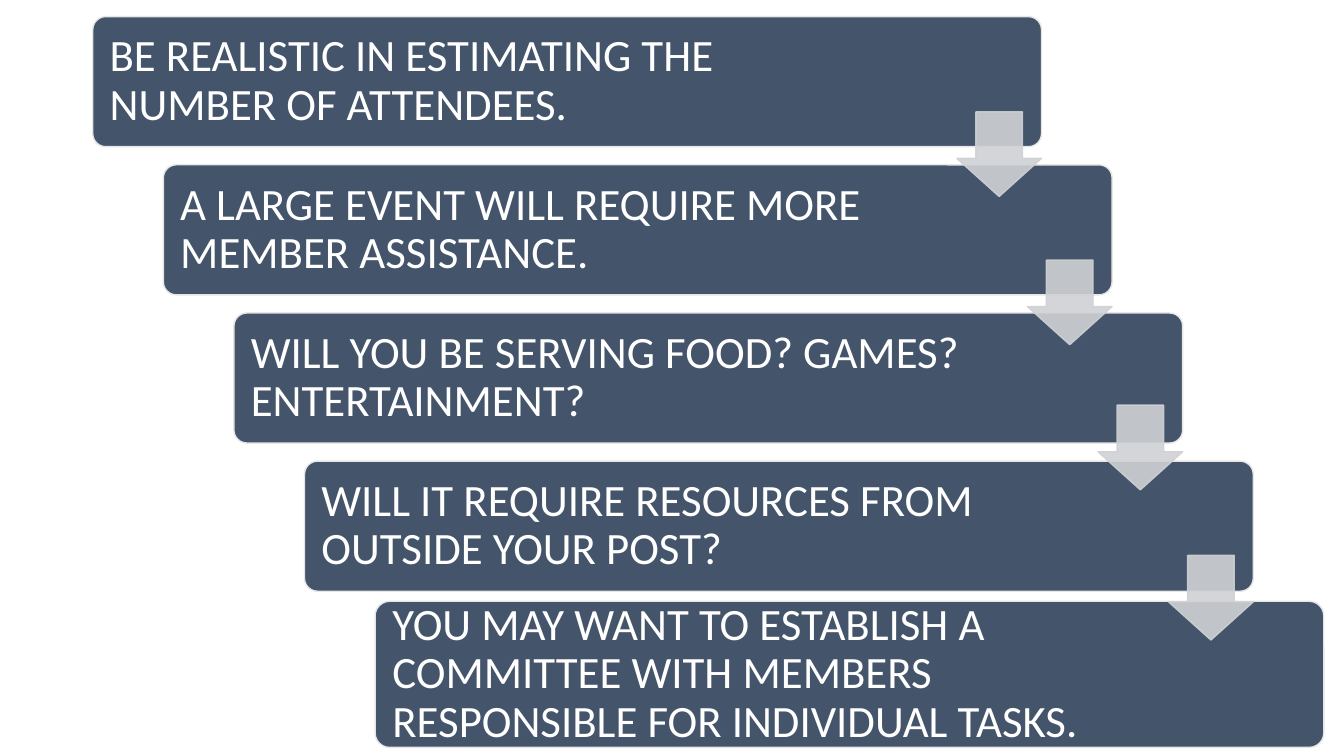
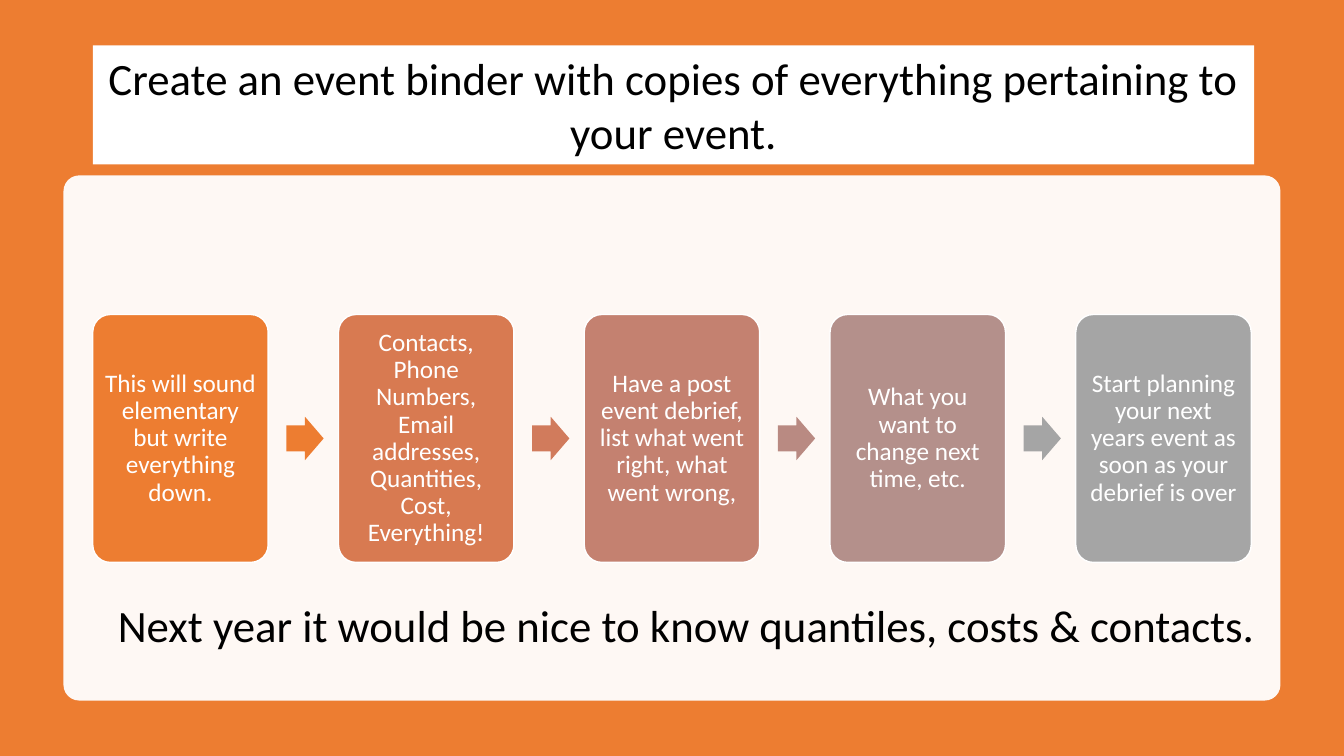
"""Builds two event-planning slides: a descending staircase and a left-to-right process."""
import lxml.etree
import pptx
import pptx.dml.color
import pptx.enum.shapes
import pptx.enum.text
import pptx.oxml.ns
import pptx.util

Inches = pptx.util.Inches
SHAPES = pptx.enum.shapes.MSO_SHAPE
ALIGN = pptx.enum.text.PP_ALIGN
MIDDLE = pptx.enum.text.MSO_ANCHOR.MIDDLE

FONT = "Calibri"
WHITE, BLACK, ORANGE = "FFFFFF", "000000", "ED7D31"
NAVY, PALE_GREY, ARROW_GREY = "44546A", "E7E6E6", "CFD1D4"

STAIRS = [
    ("BE REALISTIC IN ESTIMATING THE NUMBER OF ATTENDEES.", 1.29),
    ("A LARGE EVENT WILL REQUIRE MORE MEMBER ASSISTANCE.", 1.29),
    ("WILL YOU BE SERVING FOOD? GAMES? ENTERTAINMENT?", 1.29),
    ("WILL IT REQUIRE RESOURCES FROM OUTSIDE YOUR POST?", 1.29),
    ("YOU MAY WANT TO ESTABLISH A COMMITTEE WITH MEMBERS "
     "RESPONSIBLE FOR INDIVIDUAL TASKS.", 1.45),
]
STAIR_ARROW_TOPS = [1.11, 2.58, 4.02, 5.51]

BINDER_TITLE = "Create an event binder with copies of everything pertaining to your event."
BINDER_STEPS = [
    ("This will sound elementary but write everything down.", ORANGE),
    ("Contacts, Phone Numbers, Email addresses, Quantities, Cost, Everything!", "D87A51"),
    ("Have a post event debrief, list what went right, what went wrong,", "C48170"),
    ("What you want to change next time, etc.", "B4908B"),
    ("Start planning your next years event as soon as your debrief is over", "A5A5A5"),
]
BINDER_ARROW_COLOURS = [ORANGE, "D17B5C", "B98A82", "A5A5A5"]
BINDER_CLOSING = "Next year it would be nice to know quantiles, costs & contacts."


def paint(fill, colour, opacity=100):
    fill.solid()
    fill.fore_color.rgb = pptx.dml.color.RGBColor.from_string(colour)
    if opacity < 100:
        for tone in fill._xPr.iter(pptx.oxml.ns.qn("a:srgbClr")):
            alpha = lxml.etree.SubElement(tone, pptx.oxml.ns.qn("a:alpha"))
            alpha.set("val", str(opacity * 1000))


def add_block(slide, preset, place, colour, adjustments, outline=None, opacity=100):
    block = slide.shapes.add_shape(preset, *map(Inches, place))
    block.shadow.inherit = False
    for index, value in enumerate(adjustments):
        block.adjustments[index] = value
    paint(block.fill, colour, opacity)
    if outline:
        paint(block.line.fill, outline, opacity)
        block.line.width = pptx.util.Pt(1)
    else:
        block.line.fill.background()
    return block


def write(holder, text, size, colour, align, insets=(0.1, 0.05, 0.1, 0.05), spacing=1.0):
    frame = holder.text_frame
    frame.word_wrap = True
    frame.auto_size = pptx.enum.text.MSO_AUTO_SIZE.NONE
    frame.vertical_anchor = MIDDLE
    (frame.margin_left, frame.margin_top,
     frame.margin_right, frame.margin_bottom) = map(Inches, insets)
    paragraph = frame.paragraphs[0]
    paragraph.alignment = align
    paragraph.line_spacing = spacing
    run = paragraph.add_run()
    run.text = text
    run.font.name = FONT
    run.font.size = pptx.util.Pt(size)
    run.font.color.rgb = pptx.dml.color.RGBColor.from_string(colour)


def build_staircase(deck):
    slide = deck.slides.add_slide(deck.slide_layouts[6])
    paint(slide.background.fill, WHITE)
    left, shift, width = 0.92, 0.7, 9.41
    first_centre, pitch = 0.81, 1.47
    for level, (question, height) in enumerate(STAIRS):
        top = first_centre + level * pitch - height / 2
        stair = add_block(slide, SHAPES.ROUNDED_RECTANGLE,
                          (left + level * shift, top, width, height),
                          NAVY, [0.1], PALE_GREY)
        write(stair, question, 32, WHITE, ALIGN.LEFT, (0.13, 0, 1.63, 0), 0.9)
    arrow_size = 0.84
    for level, top in enumerate(STAIR_ARROW_TOPS):
        arrow_left = left + width - arrow_size + level * shift
        add_block(slide, SHAPES.DOWN_ARROW, (arrow_left, top, arrow_size, arrow_size),
                  ARROW_GREY, [0.45, 0.55], ARROW_GREY, 90).adjustments[0] = 0.55
        slide.shapes[-1].adjustments[1] = 0.45


def build_binder(deck):
    slide = deck.slides.add_slide(deck.slide_layouts[5])
    paint(slide.background.fill, ORANGE)
    title = slide.shapes.title
    title.left, title.top, title.width, title.height = map(Inches, (0.92, 0.45, 11.52, 1.18))
    paint(title.fill, WHITE)
    write(title, BINDER_TITLE, 32, BLACK, ALIGN.CENTER)
    add_block(slide, SHAPES.ROUNDED_RECTANGLE, (0.63, 1.74, 12.07, 5.21),
              WHITE, [0.03], opacity=95)

    first, last, top, width, height = 0.92, 10.67, 3.12, 1.74, 2.46
    pitch = (last - first) / (len(BINDER_STEPS) - 1)
    for index, (advice, colour) in enumerate(BINDER_STEPS):
        card = add_block(slide, SHAPES.ROUNDED_RECTANGLE,
                         (first + index * pitch, top, width, height), colour, [0.1], WHITE)
        write(card, advice, 18, WHITE, ALIGN.CENTER, (0.07, 0.07, 0.07, 0.07), 0.9)
    arrow_width, arrow_height = 0.37, 0.43
    for index, colour in enumerate(BINDER_ARROW_COLOURS):
        arrow_left = first + index * pitch + width + 0.18
        arrow_top = top + (height - arrow_height) / 2
        add_block(slide, SHAPES.RIGHT_ARROW,
                  (arrow_left, arrow_top, arrow_width, arrow_height), colour, [0.6, 0.5])

    closing = slide.shapes.add_textbox(*map(Inches, (1.07, 5.88, 11.6, 0.64)))
    write(closing, BINDER_CLOSING, 32, BLACK, ALIGN.LEFT)


def main():
    deck = pptx.Presentation()
    deck.slide_width, deck.slide_height = Inches(13.33), Inches(7.5)
    build_staircase(deck)
    build_binder(deck)
    deck.save("out.pptx")


if __name__ == "__main__":
    main()
